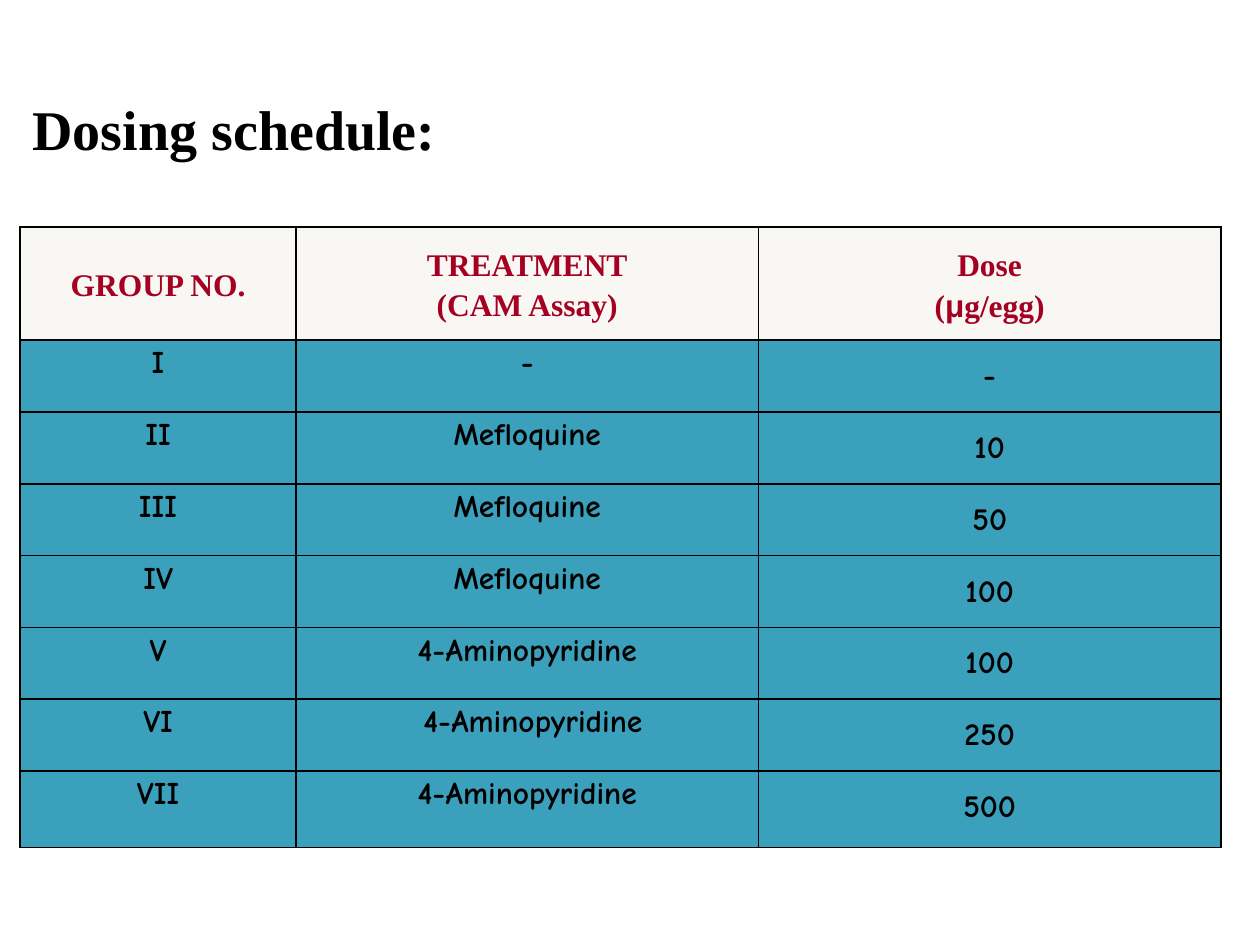
from lxml.etree import SubElement
from pptx import Presentation
from pptx.dml.color import RGBColor
from pptx.enum.text import MSO_ANCHOR as Anchor, MSO_AUTO_SIZE as AutoSize, PP_ALIGN as Align
from pptx.oxml.ns import qn
from pptx.util import Inches, Pt

TITLE = "Dosing schedule:"
# Each header cell is a list of lines, each line a list of spans
HEADER = [
    [["GROUP NO."]],
    [["TREATMENT"], ["(CAM Assay)"]],
    [["Dose"], ["(", "μ", "g/egg)"]],
]
ROWS = [
    ("I", "-", "-"),
    ("II", "Mefloquine", "10"),
    ("III", "Mefloquine", "50"),
    ("IV", "Mefloquine", "100"),
    ("V", "4-Aminopyridine", "100"),
    ("VI", " 4-Aminopyridine", "250"),
    ("VII", "4-Aminopyridine", "500"),
]

BLACK = RGBColor(0x00, 0x00, 0x00)
CRIMSON = RGBColor(0xA5, 0x00, 0x21)
IVORY = RGBColor(0xF8, 0xF7, 0xF3)
TEAL = RGBColor(0x3B, 0xA0, 0xBB)
SERIF, CASUAL, SANS = "Times New Roman", "Comic Neue", "Arial"

LEFT, TITLE_TOP, TABLE_TOP = 0.16, 0.7, 1.8
COLUMNS = [2.19, 3.67, 3.67]
HEIGHTS = [0.9] + [0.57] * (len(ROWS) - 1) + [0.61]

TITLE_FONT = {"name": SERIF, "size": Pt(32), "bold": True}
HEADER_FONT = {"name": SERIF, "size": Pt(18), "bold": True}
BODY_FONT = {**HEADER_FONT, "name": CASUAL}
HEADER_CELL = {"vertical_anchor": Anchor.MIDDLE}
BODY_CELL = {"vertical_anchor": Anchor.TOP}
MARGINS = {"margin_left": Inches(0.07), "margin_right": Inches(0.07),
           "margin_top": 0, "margin_bottom": 0}
HEADER_PARA = {"alignment": Align.CENTER, "line_spacing": 1.15}
BODY_PARA = {**HEADER_PARA, "space_after": Pt(10)}
DOSE_PARA = {"alignment": Align.CENTER, "line_spacing": 1.5}


def set_format(target, values):
    for name, value in values.items():
        setattr(target, name, value)


def add_span(para, text, font, color):
    span = para.add_run()
    span.text = text
    set_format(span.font, font)
    span.font.color.rgb = color


def add_borders(cell):
    """Draw thin black lines on all four sides; call before filling the cell."""
    properties = cell._tc.get_or_add_tcPr()
    for side in ("a:lnL", "a:lnR", "a:lnT", "a:lnB"):
        line = SubElement(properties, qn(side), w=str(Pt(1)))
        fill = SubElement(line, qn("a:solidFill"))
        SubElement(fill, qn("a:srgbClr"), val=str(BLACK))


def fill_cell(cell, lines, cell_format, para_format, font, color, fill):
    add_borders(cell)
    cell.fill.solid()
    cell.fill.fore_color.rgb = fill
    set_format(cell, {**MARGINS, **cell_format})
    frame = cell.text_frame
    for index, line in enumerate(lines):
        para = frame.add_paragraph() if index else frame.paragraphs[0]
        set_format(para, para_format)
        for text in line:
            span_font = {**font, "name": SANS} if text == "μ" else font
            add_span(para, text, span_font, color)


def add_schedule(page):
    table = page.shapes.add_table(
        len(HEIGHTS), len(COLUMNS), Inches(LEFT), Inches(TABLE_TOP),
        Inches(sum(COLUMNS)), Inches(sum(HEIGHTS))).table
    for column, width in zip(table.columns, COLUMNS):
        column.width = Inches(width)
    for row, height in zip(table.rows, HEIGHTS):
        row.height = Inches(height)

    for col, lines in enumerate(HEADER):
        fill_cell(table.cell(0, col), lines, HEADER_CELL, HEADER_PARA,
                  HEADER_FONT, CRIMSON, IVORY)
    for row, values in enumerate(ROWS, start=1):
        for col, text in enumerate(values):
            para_format = DOSE_PARA if col == len(COLUMNS) - 1 else BODY_PARA
            fill_cell(table.cell(row, col), [[text]], BODY_CELL, para_format,
                      BODY_FONT, BLACK, TEAL)


def add_title(page):
    box = page.shapes.add_textbox(Inches(LEFT), Inches(TITLE_TOP), Inches(4.22), Inches(0.64))
    set_format(box.text_frame, {"word_wrap": True, "auto_size": AutoSize.SHAPE_TO_FIT_TEXT})
    add_span(box.text_frame.paragraphs[0], TITLE, TITLE_FONT, BLACK)


def main():
    deck = Presentation()
    set_format(deck, {"slide_width": Inches(10), "slide_height": Inches(7.5)})
    page = deck.slides.add_slide(deck.slide_layouts[6])
    add_schedule(page)
    add_title(page)
    deck.save("out.pptx")


if __name__ == "__main__":
    main()
